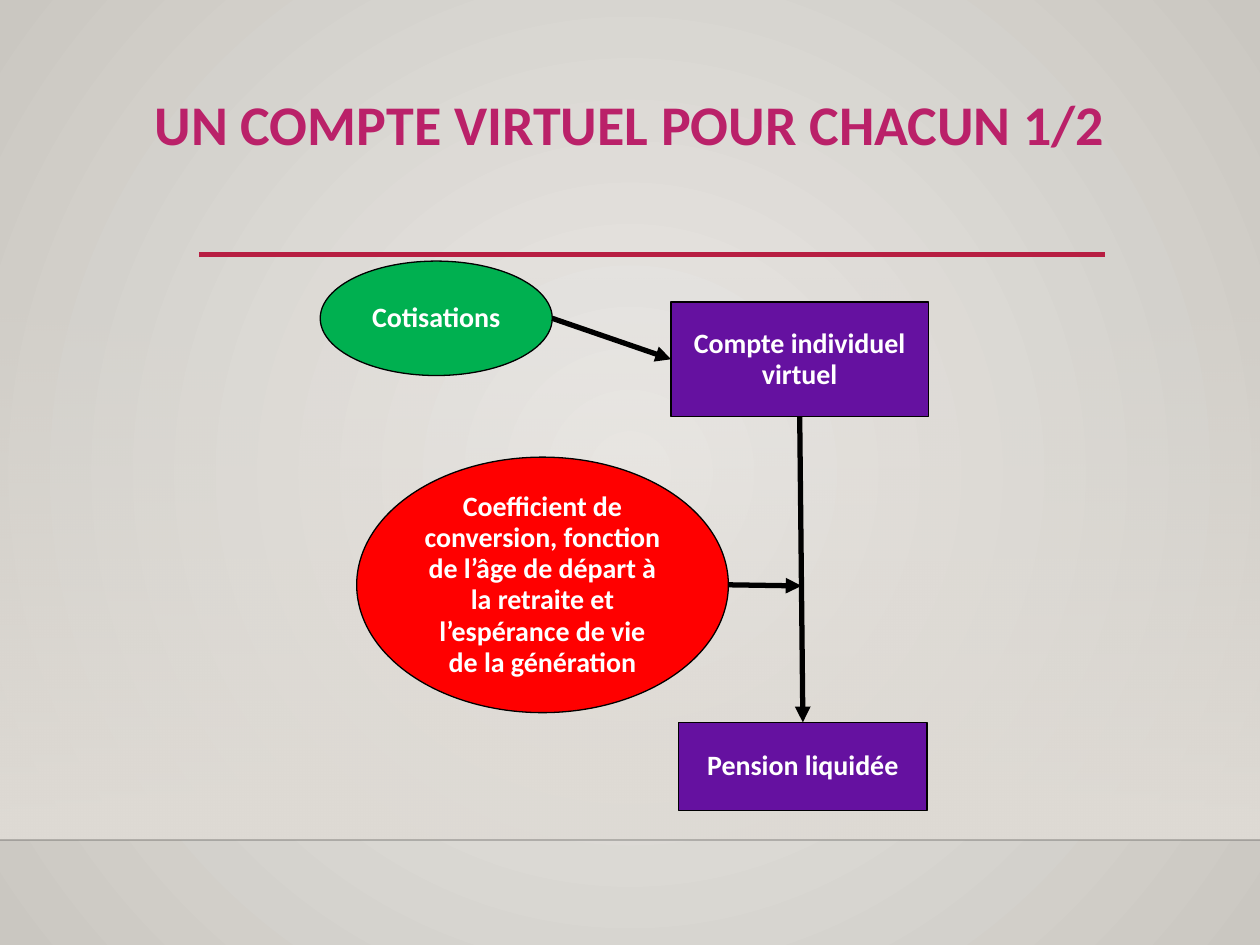
from dataclasses import dataclass

from lxml.etree import SubElement
from pptx import Presentation
from pptx.dml.color import RGBColor
from pptx.enum.shapes import MSO_CONNECTOR, MSO_SHAPE
from pptx.enum.text import MSO_ANCHOR, MSO_AUTO_SIZE, PP_ALIGN
from pptx.oxml.ns import qn
from pptx.shapes.autoshape import Shape
from pptx.shapes.connector import Connector
from pptx.slide import Slide
from pptx.util import Pt

FONT = "Calibri"
BLACK = RGBColor(0x00, 0x00, 0x00)
WHITE = RGBColor(0xFF, 0xFF, 0xFF)
MAGENTA = RGBColor(0xBA, 0x21, 0x69)
CRIMSON = RGBColor(0xB7, 0x1E, 0x42)
PURPLE = RGBColor(0x65, 0x11, 0xA0)
GREEN = RGBColor(0x00, 0xB0, 0x50)
RED = RGBColor(0xFF, 0x00, 0x00)
CENTRE_GREY = RGBColor(0xEC, 0xEA, 0xE7)
EDGE_GREY = RGBColor(0xCA, 0xC7, 0xC1)
PANEL_GREY = RGBColor(0xDF, 0xDB, 0xD5)

PAGE_WIDTH, PAGE_HEIGHT = 720, 540
FLOOR = 480


@dataclass(frozen=True)
class Node:
    text: str
    preset: MSO_SHAPE
    fill: RGBColor
    left: float
    top: float
    width: float
    height: float

    @property
    def right_middle(self) -> tuple[float, float]:
        return self.left + self.width, self.top + self.height / 2


ACCOUNT = Node("Compte individuel virtuel", MSO_SHAPE.RECTANGLE, PURPLE,
               383.5, 172.6, 147, 65.4)
CONTRIBUTIONS = Node("Cotisations", MSO_SHAPE.OVAL, GREEN,
                     183, 149.2, 132.6, 65.4)
PENSION = Node("Pension liquidée", MSO_SHAPE.RECTANGLE, PURPLE,
               387.8, 412.8, 142, 50.2)
COEFFICIENT = Node(
    "Coefficient de conversion, fonction de l’âge de départ à la retraite "
    "et l’espérance de vie de la génération",
    MSO_SHAPE.OVAL, RED, 203.8, 261.2, 212.4, 146)


def set_background(page: Slide) -> None:
    """Fill the page with a gradient that spreads from its centre."""
    fill = page.background.fill
    fill.gradient()
    for stop, colour in zip(fill.gradient_stops, (CENTRE_GREY, EDGE_GREY)):
        stop.color.rgb = colour
    gradient = page.background._cSld.find(".//" + qn("a:gradFill"))
    gradient.remove(gradient.find(qn("a:lin")))
    circle = SubElement(gradient, qn("a:path"), path="circle")
    sides = dict.fromkeys("ltrb", "50000")
    SubElement(circle, qn("a:fillToRect"), sides)


def add_panel(page: Slide) -> None:
    """Add the band that fades in towards the floor line."""
    panel = page.shapes.add_shape(MSO_SHAPE.RECTANGLE, 0, Pt(158.4),
                                  Pt(PAGE_WIDTH), Pt(FLOOR - 158.4))
    panel.shadow.inherit = False
    panel.line.fill.background()
    panel.fill.gradient()
    panel.fill.gradient_angle = 270
    for stop in panel.fill.gradient_stops:
        stop.color.rgb = PANEL_GREY
    first_colour = panel._element.spPr.find(".//" + qn("a:srgbClr"))
    SubElement(first_colour, qn("a:alpha"), val="0")


def add_line(page: Slide, start: tuple[float, float], end: tuple[float, float],
             colour: RGBColor, weight: float) -> Connector:
    line = page.shapes.add_connector(MSO_CONNECTOR.STRAIGHT,
                                     *map(Pt, start + end))
    line.line.color.rgb = colour
    line.line.width = Pt(weight)
    SubElement(line._element.spPr, qn("a:effectLst"))
    return line


def add_arrow(page: Slide, start: tuple[float, float],
              end: tuple[float, float]) -> Connector:
    arrow = add_line(page, start, end, BLACK, 3)
    SubElement(arrow.line._get_or_add_ln(), qn("a:tailEnd"), type="triangle")
    return arrow


def add_node(page: Slide, node: Node) -> Shape:
    box = page.shapes.add_shape(node.preset, Pt(node.left), Pt(node.top),
                                Pt(node.width), Pt(node.height))
    box.shadow.inherit = False
    box.fill.solid()
    box.fill.fore_color.rgb = node.fill
    box.line.color.rgb = BLACK
    box.line.width = Pt(0.75)
    write(box, node.text, 16, WHITE, 0.93)
    return box


def write(box: Shape, text: str, size: float, colour: RGBColor,
          spacing: float) -> None:
    """Put one bold, centred paragraph in the box."""
    frame = box.text_frame
    frame.text = text
    frame.word_wrap = True
    frame.auto_size = MSO_AUTO_SIZE.NONE
    frame.vertical_anchor = MSO_ANCHOR.MIDDLE
    para = frame.paragraphs[0]
    para.alignment = PP_ALIGN.CENTER
    para.line_spacing = spacing
    para.font.name = FONT
    para.font.size = Pt(size)
    para.font.bold = True
    para.font.color.rgb = colour


def main() -> None:
    deck = Presentation()
    deck.slide_width, deck.slide_height = Pt(PAGE_WIDTH), Pt(PAGE_HEIGHT)
    page = deck.slides.add_slide(deck.slide_layouts[5])
    set_background(page)

    add_panel(page)
    floor_line = add_line(page, (0, FLOOR), (PAGE_WIDTH, FLOOR), BLACK, 1)
    floor_colour = floor_line._element.spPr.find(".//" + qn("a:srgbClr"))
    SubElement(floor_colour, qn("a:alpha"), val="20000")
    add_line(page, (113.8, 145.4), (631.2, 145.4), CRIMSON, 2.5)

    title = page.shapes.title
    title.left, title.top = Pt(0), Pt(0)
    title.width, title.height = Pt(PAGE_WIDTH), Pt(145.4)
    write(title, "UN COMPTE VIRTUEL POUR CHACUN 1/2", 32, MAGENTA, 0.9)

    account = add_node(page, ACCOUNT)
    add_node(page, CONTRIBUTIONS)
    pension = add_node(page, PENSION)
    add_node(page, COEFFICIENT)

    start = CONTRIBUTIONS.right_middle
    add_arrow(page, start, start).end_connect(account, 1)
    conversion = add_arrow(page, (0, 0), (0, 0))
    conversion.begin_connect(account, 2)
    conversion.end_connect(pension, 0)
    add_arrow(page, COEFFICIENT.right_middle, (458, 334.8))

    deck.save("out.pptx")


if __name__ == "__main__":
    main()
